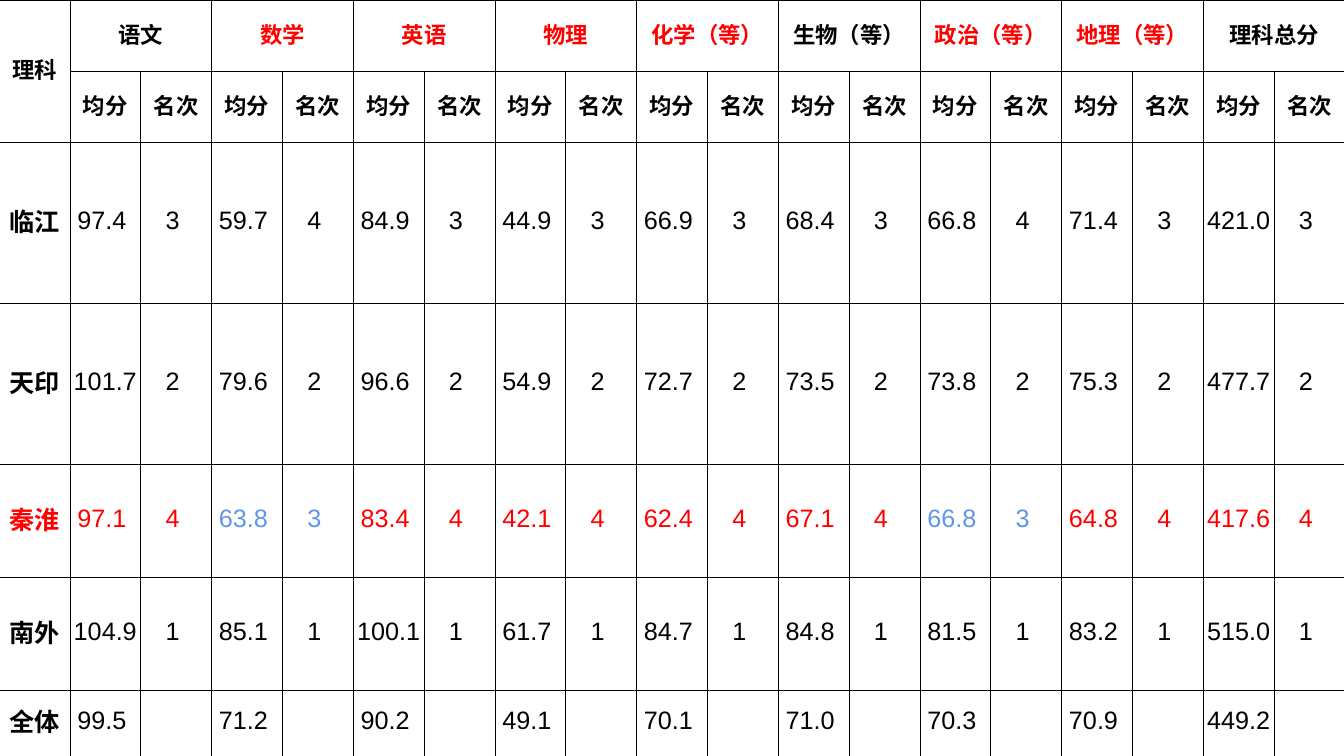
from dataclasses import dataclass

from lxml.etree import SubElement
from pptx import Presentation
from pptx.dml.color import RGBColor
from pptx.enum.text import MSO_ANCHOR, PP_ALIGN
from pptx.oxml import parse_xml
from pptx.oxml.ns import nsdecls
from pptx.util import Emu, Pt


@dataclass(frozen=True)
class Theme:
    """Colours, font and type sizes of the slide."""
    font: str = "Arial"
    black: str = "000000"
    white: str = "FFFFFF"
    red: str = "FF0000"
    blue: str = "6096E6"
    head_size: int = 16
    body_size: int = 18
    border: float = 0.5


THEME = Theme()
EMU_PER_PX = 914400 / 100.8
SLIDE_W, SLIDE_H = 1344, 756
ROW_HEIGHTS = [71, 71, 161, 161, 113, 113, 66]
SUBJECTS = ["语文", "数学", "英语", "物理", "化学（等）", "生物（等）",
            "政治（等）", "地理（等）", "理科总分"]
RED_SUBJECTS = {"数学", "英语", "物理", "化学（等）", "政治（等）", "地理（等）"}
RED_SCHOOL = "秦淮"
BLUE_SUBJECTS = {"数学", "政治（等）"}
SCHOOLS = [
    ("临江", "97.4 59.7 84.9 44.9 66.9 68.4 66.8 71.4 421.0", "343333433"),
    ("天印", "101.7 79.6 96.6 54.9 72.7 73.5 73.8 75.3 477.7", "222222222"),
    ("秦淮", "97.1 63.8 83.4 42.1 62.4 67.1 66.8 64.8 417.6", "434444344"),
    ("南外", "104.9 85.1 100.1 61.7 84.7 84.8 81.5 83.2 515.0", "111111111"),
    ("全体", "99.5 71.2 90.2 49.1 70.1 71.0 70.3 70.9 449.2", ""),
]


def px(n):
    """Turn pixels into EMU."""
    return Emu(round(n * EMU_PER_PX))


def add_borders(cell):
    """Draw a thin black line on each side of a cell."""
    tc_pr = cell._tc.get_or_add_tcPr()
    for i, side in enumerate("LRTB"):
        ln = parse_xml(f'<a:ln{side} {nsdecls("a")} w="{Pt(THEME.border)}"/>')
        fill = SubElement(ln, ln.tag.split("}")[0] + "}solidFill")
        SubElement(fill, fill.tag.replace("solidFill", "srgbClr"), val=THEME.black)
        tc_pr.insert(i, ln)


def format_cell(cell, is_head):
    """Set the fill, margins, anchor and borders of a cell."""
    if is_head:
        cell.fill.solid()
        cell.fill.fore_color.rgb = RGBColor.from_string(THEME.white)
    else:
        cell.fill.background()
    cell.margin_left = cell.margin_right = cell.margin_top = px(1)
    cell.margin_bottom = px(5)
    cell.vertical_anchor = MSO_ANCHOR.MIDDLE
    add_borders(cell)


def write(cell, text, size, color=THEME.black, bold=False):
    """Put one centred run of text in a cell."""
    p = cell.text_frame.paragraphs[0]
    p.alignment = PP_ALIGN.CENTER
    r = p.add_run()
    r.text = text
    r.font.name = THEME.font
    r.font.size = Pt(size)
    r.font.bold = bold
    r.font.color.rgb = RGBColor.from_string(color)


def fill_head(table):
    """Write the two header rows and merge their cells."""
    table.cell(0, 0).merge(table.cell(1, 0))
    write(table.cell(0, 0), "理科", THEME.head_size, bold=True)
    for i, subject in enumerate(SUBJECTS):
        col = 1 + 2 * i
        table.cell(0, col).merge(table.cell(0, col + 1))
        color = THEME.red if subject in RED_SUBJECTS else THEME.black
        write(table.cell(0, col), subject, THEME.head_size, color, True)
        for j, label in enumerate(("均分", "名次")):
            write(table.cell(1, col + j), label, THEME.head_size, bold=True)


def fill_school(table, row, school, scores, ranks):
    """Write the name, average scores and ranks of one school."""
    base = THEME.red if school == RED_SCHOOL else THEME.black
    write(table.cell(row, 0), school, THEME.body_size, base, True)
    for i, (subject, score) in enumerate(zip(SUBJECTS, scores.split())):
        is_blue = school == RED_SCHOOL and subject in BLUE_SUBJECTS
        color = THEME.blue if is_blue else base
        write(table.cell(row, 1 + 2 * i), score + " ", THEME.body_size, color)
        if ranks:
            write(table.cell(row, 2 + 2 * i), ranks[i] + " ", THEME.body_size, color)


def add_score_table(slide, x, y, w, h):
    """Place the score table in the given box."""
    n_cols = 1 + 2 * len(SUBJECTS)
    frame = slide.shapes.add_table(len(ROW_HEIGHTS), n_cols, px(x), px(y), px(w), px(h))
    table = frame.table
    table.first_row = table.horz_banding = False
    for col in table.columns:
        col.width = px(w / n_cols)
    for row, height in zip(table.rows, ROW_HEIGHTS):
        row.height = px(height * h / sum(ROW_HEIGHTS))
    for i, row in enumerate(table.rows):
        for cell in row.cells:
            format_cell(cell, i < 2)
    fill_head(table)
    for i, school in enumerate(SCHOOLS, start=2):
        fill_school(table, i, *school)


def main():
    """Build and save the presentation."""
    prs = Presentation()
    prs.slide_width, prs.slide_height = px(SLIDE_W), px(SLIDE_H)
    slide = prs.slides.add_slide(prs.slide_layouts[6])
    add_score_table(slide, -1, 0, SLIDE_W + 2, SLIDE_H)
    prs.save("out.pptx")


if __name__ == "__main__":
    main()
